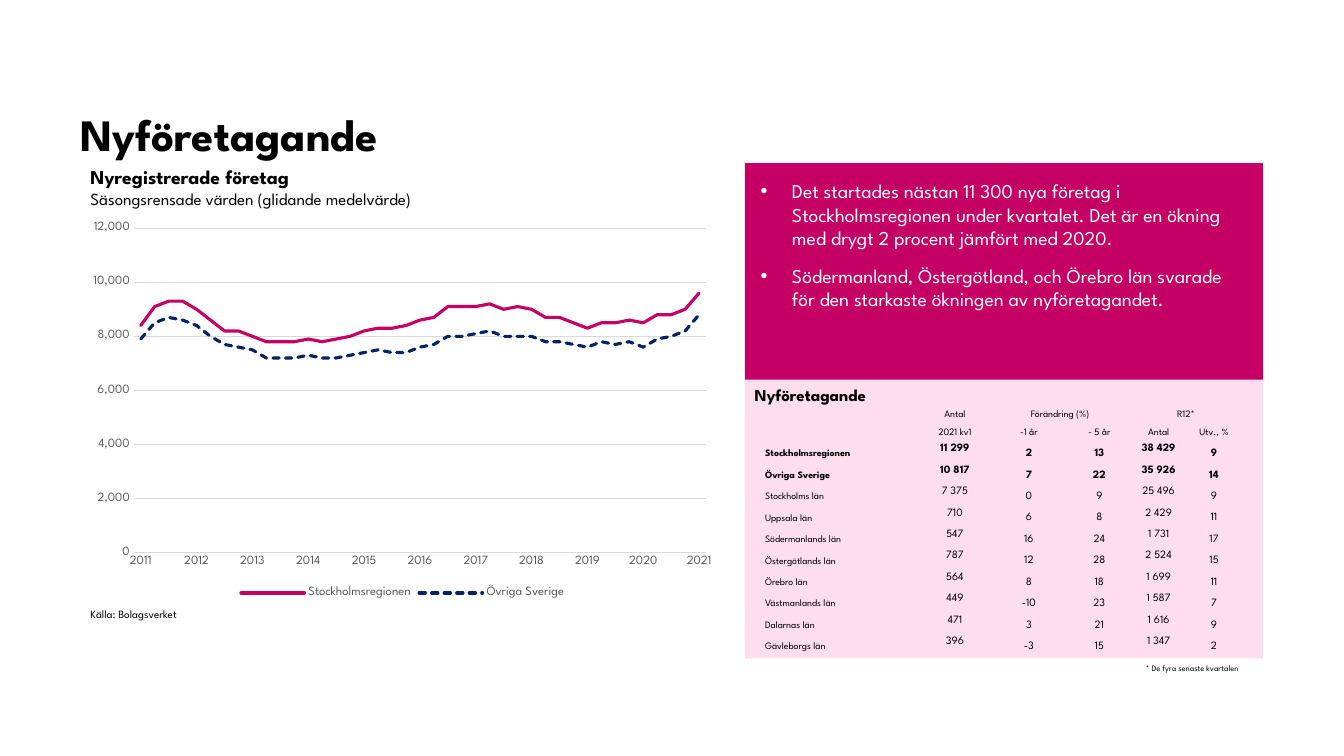
from lxml import etree
from pptx import Presentation
from pptx.chart.data import CategoryChartData
from pptx.dml.color import RGBColor
from pptx.enum.chart import XL_CHART_TYPE, XL_LEGEND_POSITION, XL_MARKER_STYLE, XL_TICK_MARK
from pptx.enum.dml import MSO_LINE
from pptx.enum.shapes import MSO_SHAPE
from pptx.enum.text import MSO_ANCHOR, MSO_AUTO_SIZE, PP_ALIGN
from pptx.oxml.ns import qn
from pptx.util import Cm, Pt

FONT = "League Spartan"
BLACK, WHITE, GREY, GRID = "000000", "FFFFFF", "595959", "D9D9D9"
MAGENTA, PINK, NAVY = "C40064", "FEDEED", "052364"
NO_TABLE_STYLE = "{2D5ABB26-0587-4C30-8999-92F81FD0307C}"

BULLETS = [
    "Det startades nästan 11 300 nya företag i Stockholmsregionen under kvartalet. "
    "Det är en ökning med drygt 2 procent jämfört med 2020.",
    "Södermanland, Östergötland, och Örebro län svarade för den starkaste ökningen "
    "av nyföretagandet.",
]

HEADER_ROWS = [
    ("", "Antal", "Förändring (%)", "", "R12*", ""),
    ("", "2021 kv1", "-1 år", "- 5 år", "Antal", "Utv., %"),
]
REGION_ROWS = [
    ("Stockholmsregionen", "11 299", "2", "13", "38 429", "9"),
    ("Övriga Sverige", "10 817", "7", "22", "35 926", "14"),
    ("Stockholms län", "7 375", "0", "9", "25 496", "9"),
    ("Uppsala län", "710", "6", "8", "2 429", "11"),
    ("Södermanlands län", "547", "16", "24", "1 731", "17"),
    ("Östergötlands län", "787", "12", "28", "2 524", "15"),
    ("Örebro län", "564", "8", "18", "1 699", "11"),
    ("Västmanlands län", "449", "-10", "23", "1 587", "7"),
    ("Dalarnas län", "471", "3", "21", "1 616", "9"),
    ("Gävleborgs län", "396", "-3", "15", "1 347", "2"),
]
COLUMN_WIDTHS = (3.94, 1.75, 1.98, 1.57, 1.42, 1.37)
COUNT_COLUMNS = (1, 4)

# Registrations per quarter, in hundreds
STOCKHOLM = [84, 91, 93, 93, 90, 86, 82, 82, 80, 78, 78, 78, 79, 78, 79, 80, 82, 83, 83, 84, 86,
             87, 91, 91, 91, 92, 90, 91, 90, 87, 87, 85, 83, 85, 85, 86, 85, 88, 88, 90, 96]
REST_OF_SWEDEN = [79, 85, 87, 86, 84, 80, 77, 76, 75, 72, 72, 72, 73, 72, 72, 73, 74, 75, 74, 74,
                  76, 77, 80, 80, 81, 82, 80, 80, 80, 78, 78, 77, 76, 78, 77, 78, 76, 79, 80, 82,
                  88]
SERIES = [
    ("Stockholmsregionen", STOCKHOLM, MAGENTA, MSO_LINE.SOLID),
    ("Övriga Sverige", REST_OF_SWEDEN, NAVY, MSO_LINE.SQUARE_DOT),
]


def rgb(color):
    return RGBColor.from_string(color)


def format_font(font, size, color=BLACK, bold=False):
    for name, value in {"name": FONT, "size": Pt(size), "bold": bold}.items():
        setattr(font, name, value)
    font.color.rgb = rgb(color)


def add_run(paragraph, text, size, color=BLACK, bold=False):
    run = paragraph.add_run()
    run.text = text
    format_font(run.font, size, color, bold)


def add_title(slide, text):
    frame = slide.shapes.add_textbox(Cm(2.03), Cm(0.94), Cm(23.42), Cm(3.1)).text_frame
    margins = dict.fromkeys(("margin_left", "margin_top", "margin_right", "margin_bottom"), 0)
    for name, value in {"word_wrap": True, "vertical_anchor": MSO_ANCHOR.BOTTOM, **margins}.items():
        setattr(frame, name, value)
    add_run(frame.paragraphs[0], text, 32, bold=True)


def add_label(slide, left, top, width, height, *lines):
    """Add an unwrapped text box; each line is (text, size, bold)."""
    frame = slide.shapes.add_textbox(Cm(left), Cm(top), Cm(width), Cm(height)).text_frame
    frame.word_wrap = False
    frame.auto_size = MSO_AUTO_SIZE.SHAPE_TO_FIT_TEXT
    for index, (text, size, bold) in enumerate(lines):
        paragraph = frame.add_paragraph() if index else frame.paragraphs[0]
        add_run(paragraph, text, size, bold=bold)


def add_panel(slide, top, height, color):
    shape = slide.shapes.add_shape(MSO_SHAPE.RECTANGLE, Cm(18.77), Cm(top), Cm(13.06), Cm(height))
    shape.shadow.inherit = False
    shape.fill.solid()
    shape.fill.fore_color.rgb = rgb(color)
    shape.line.fill.background()
    return shape


def add_bullets(shape, texts):
    frame = shape.text_frame
    frame.word_wrap = True
    frame.vertical_anchor = MSO_ANCHOR.TOP
    for side in ("left", "top", "right", "bottom"):
        setattr(frame, f"margin_{side}", Cm(0.4))
    for index, text in enumerate(texts):
        paragraph = frame.add_paragraph() if index else frame.paragraphs[0]
        paragraph.alignment = PP_ALIGN.LEFT
        if index:
            paragraph.space_before = Pt(10)
        properties = paragraph._p.get_or_add_pPr()
        properties.set("marL", str(Cm(0.79)))
        properties.set("indent", str(-Cm(0.79)))
        etree.SubElement(properties, qn("a:buFont")).set("typeface", "Arial")
        etree.SubElement(properties, qn("a:buChar")).set("char", "•")
        add_run(paragraph, text, 14, WHITE)


def fill_cell(cell, text, size, bold, alignment, anchor):
    cell.fill.background()
    margins = {"margin_left": Cm(0.03), "margin_right": Cm(0.03),
               "margin_top": Cm(0.03), "margin_bottom": 0}
    for name, value in {"vertical_anchor": anchor, **margins}.items():
        setattr(cell, name, value)
    paragraph = cell.text_frame.paragraphs[0]
    paragraph.alignment = alignment
    if text:
        add_run(paragraph, text, size, bold=bold)
    else:
        paragraph._p.get_or_add_endParaRPr().set("sz", str(size * 100))


def add_region_table(slide):
    rows = HEADER_ROWS + REGION_ROWS
    heights = [0.46] * len(HEADER_ROWS) + [0.54] * len(REGION_ROWS)
    frame = slide.shapes.add_table(len(rows), len(COLUMN_WIDTHS), Cm(19.25), Cm(10.11),
                                   Cm(sum(COLUMN_WIDTHS)), Cm(sum(heights)))
    table = frame.table
    table.first_row = table.horz_banding = False
    table._tbl.tblPr.find(qn("a:tableStyleId")).text = NO_TABLE_STYLE
    for column, width in zip(table.columns, COLUMN_WIDTHS):
        column.width = Cm(width)
    for row_index, (values, height) in enumerate(zip(rows, heights)):
        table.rows[row_index].height = Cm(height)
        is_header = row_index < len(HEADER_ROWS)
        is_total = row_index in (2, 3)
        for column_index, value in enumerate(values):
            is_count = column_index in COUNT_COLUMNS and not is_header
            fill_cell(table.cell(row_index, column_index), value,
                      7 if is_header or column_index == 0 else 8, is_total,
                      PP_ALIGN.CENTER if column_index else PP_ALIGN.LEFT,
                      MSO_ANCHOR.MIDDLE if is_count else MSO_ANCHOR.BOTTOM)
    for first in (2, 4):
        table.cell(0, first).merge(table.cell(0, first + 1))


def format_axes(chart):
    for axis in (chart.category_axis, chart.value_axis):
        axis.major_tick_mark = axis.minor_tick_mark = XL_TICK_MARK.NONE
        format_font(axis.tick_labels.font, 9, GREY)
    value_axis = chart.value_axis
    for name, value in {"minimum_scale": 0, "maximum_scale": 12000, "major_unit": 2000}.items():
        setattr(value_axis, name, value)
    value_axis.tick_labels.number_format = "#,##0"
    value_axis.tick_labels.number_format_is_linked = False
    value_axis.format.line.fill.background()
    for line in (chart.category_axis.format.line, value_axis.major_gridlines.format.line):
        line.color.rgb = rgb(GRID)
        line.width = Pt(0.75)


def add_registration_chart(slide):
    data = CategoryChartData(number_format="#,##0")
    data.categories = [str(2011 + quarter // 4) if quarter % 4 == 0 else ""
                       for quarter in range(len(STOCKHOLM))]
    for name, hundreds, _, _ in SERIES:
        data.add_series(name, [value * 100 for value in hundreds])
    chart = slide.shapes.add_chart(XL_CHART_TYPE.LINE, Cm(2.03), Cm(5.41), Cm(16.23), Cm(9.78),
                                   data).chart
    format_font(chart.font, 10)
    chart.has_title = False
    chart.has_legend = True
    chart.legend.position = XL_LEGEND_POSITION.BOTTOM
    chart.legend.include_in_layout = False
    format_font(chart.legend.font, 9, GREY)
    format_axes(chart)
    chart.plots[0].vary_by_categories = False
    for series, (_, _, color, dash) in zip(chart.plots[0].series, SERIES):
        series.smooth = False
        series.marker.style = XL_MARKER_STYLE.NONE
        line = series.format.line
        line.color.rgb = rgb(color)
        line.width = Pt(2.25)
        line.dash_style = dash
        series._element.spPr.find(qn("a:ln")).set("cap", "rnd")


def main():
    presentation = Presentation()
    presentation.slide_width = Cm(33.87)
    presentation.slide_height = Cm(19.05)
    slide = presentation.slides.add_slide(presentation.slide_layouts[6])
    add_title(slide, "Nyföretagande")
    add_label(slide, 2.03, 15.19, 3.2, 0.61, ("Källa: Bolagsverket", 8, False))
    add_panel(slide, 9.53, 7.06, PINK)
    add_bullets(add_panel(slide, 4.11, 5.46, MAGENTA), BULLETS)
    add_label(slide, 28.63, 16.59, 3.28, 0.51, ("* De fyra senaste kvartalen", 6, False))
    add_label(slide, 2.03, 4.04, 10.49, 1.37, ("Nyregistrerade företag", 14, True),
              ("Säsongsrensade värden (glidande medelvärde)", 12, False))
    add_region_table(slide)
    add_label(slide, 18.77, 9.58, 3.48, 0.76, ("Nyföretagande", 12, True))
    add_registration_chart(slide)
    presentation.save("out.pptx")


if __name__ == "__main__":
    main()
